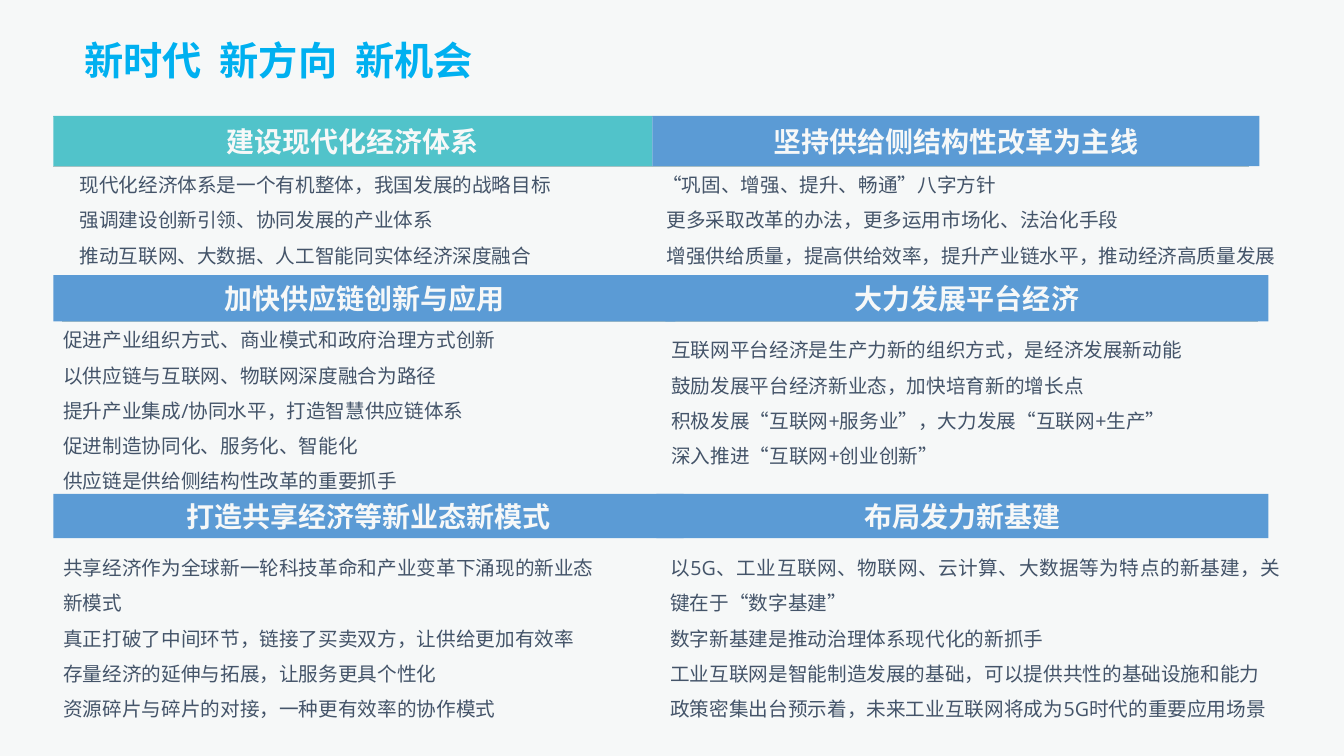
from pptx import Presentation
from pptx.dml.color import RGBColor
from pptx.enum.shapes import MSO_CONNECTOR, MSO_SHAPE
from pptx.enum.text import MSO_ANCHOR, PP_ALIGN
from pptx.oxml.ns import qn
from pptx.util import Inches, Pt

BACKGROUND, TITLE, BODY = "F6F8F8", "00B0F0", "445469"
TEAL, BLUE, RULE = "51C3CA", "5B9BD5", "B1C2C2"
CJK = "Noto Sans CJK SC"

HEADLINE = "新时代  新方向  新机会"

# Each row: band top, band height, two topics.
# Each topic: heading, colour, band (left, width),
# body (left, top, width, height), lines, numbers of the justified lines
ROWS = [
    (1.15, 0.5, [
        ("建设现代化经济体系", TEAL, (0.53, 5.94), (0.69, 1.55, 6.01, 1.86), [
            "现代化经济体系是一个有机整体，我国发展的战略目标",
            "强调建设创新引领、协同发展的产业体系",
            "推动互联网、大数据、人工智能同实体经济深度融合",
        ], ()),
        ("坚持供给侧结构性改革为主线", BLUE, (6.47, 6.02), (6.47, 1.55, 6.34, 1.81), [
            "“巩固、增强、提升、畅通”八字方针",
            " 更多采取改革的办法，更多运用市场化、法治化手段",
            " 增强供给质量，提高供给效率，提升产业链水平，推动经济高质量发展",
        ], ()),
    ]),
    (2.73, 0.46, [
        ("加快供应链创新与应用", BLUE, (0.53, 6.17), (0.53, 3.09, 6.24, 1.86), [
            "促进产业组织方式、商业模式和政府治理方式创新",
            "以供应链与互联网、物联网深度融合为路径",
            "提升产业集成/协同水平，打造智慧供应链体系",
            "促进制造协同化、服务化、智能化",
            "供应链是供给侧结构性改革的重要抓手",
        ], ()),
        ("大力发展平台经济", BLUE, (6.6, 5.98), (6.56, 3.19, 6.03, 1.57), [
            "互联网平台经济是生产力新的组织方式，是经济发展新动能",
            "鼓励发展平台经济新业态，加快培育新的增长点",
            "积极发展“互联网+服务业”，大力发展“互联网+生产”",
            "深入推进“互联网+创业创新”",
        ], (1,)),
    ]),
    (4.9, 0.44, [
        ("打造共享经济等新业态新模式", BLUE, (0.53, 6.25), (0.53, 5.35, 5.53, 1.87), [
            "共享经济作为全球新一轮科技革命和产业变革下涌现的新业态新模式",
            "真正打破了中间环节，链接了买卖双方，让供给更加有效率",
            "存量经济的延伸与拓展，让服务更具个性化",
            "资源碎片与碎片的对接，一种更有效率的协作模式",
        ], ()),
        ("布局发力新基建", BLUE, (6.51, 6.07), (6.55, 5.35, 6.25, 1.87), [
            "以5G、工业互联网、物联网、云计算、大数据等为特点的新基建，关键在于“数字基建”",
            "数字新基建是推动治理体系现代化的新抓手",
            "工业互联网是智能制造发展的基础，可以提供共性的基础设施和能力",
            "政策密集出台预示着，未来工业互联网将成为5G时代的重要应用场景",
        ], (0, 1)),
    ]),
]

# left, right, y
RULES = [(0.53, 12.39, 1.15), (0.53, 12.39, 1.65),
         (0.71, 12.58, 2.73), (0.62, 12.48, 3.19)]


def color(hex_code):
    return RGBColor.from_string(hex_code)


def add_run(paragraph, text, size, font, hex_code, bold=False):
    run = paragraph.add_run()
    run.text = text
    run.font.size = Pt(size)
    run.font.name = font
    run.font.bold = bold
    run.font.color.rgb = color(hex_code)
    east_asian = run.font._element.makeelement(qn("a:ea"), {"typeface": CJK})
    run.font._element.find(qn("a:latin")).addnext(east_asian)


def add_text_frame(slide, box):
    frame = slide.shapes.add_textbox(*map(Inches, box)).text_frame
    frame.word_wrap = True
    return frame


def add_band(slide, box, heading, fill):
    band = slide.shapes.add_shape(MSO_SHAPE.RECTANGLE, *map(Inches, box))
    band.shadow.inherit = False
    band.fill.solid()
    band.fill.fore_color.rgb = color(fill)
    band.line.fill.background()
    frame = band.text_frame
    frame.word_wrap = False
    frame.vertical_anchor = MSO_ANCHOR.MIDDLE
    frame.paragraphs[0].alignment = PP_ALIGN.CENTER
    add_run(frame.paragraphs[0], heading, 20, CJK, BACKGROUND, bold=True)


def add_body(slide, box, lines, justified):
    frame = add_text_frame(slide, box)
    for number, line in enumerate(lines):
        paragraph = frame.add_paragraph() if number else frame.paragraphs[0]
        paragraph.line_spacing = 1.5
        paragraph.alignment = PP_ALIGN.JUSTIFY if number in justified else PP_ALIGN.LEFT
        add_run(paragraph, line, 14, "Open Sans", BODY)


def add_rule(slide, left, right, y):
    rule = slide.shapes.add_connector(
        MSO_CONNECTOR.STRAIGHT, Inches(left), Inches(y), Inches(right), Inches(y))
    rule.line.color.rgb = color(RULE)
    rule.line.width = Pt(0.25)
    properties = rule._element.spPr
    properties.append(properties.makeelement(qn("a:effectLst"), {}))


def main():
    deck = Presentation()
    deck.slide_width, deck.slide_height = Inches(13.33), Inches(7.5)
    slide = deck.slides.add_slide(deck.slide_layouts[6])
    slide.background.fill.solid()
    slide.background.fill.fore_color.rgb = color(BACKGROUND)

    headline = add_text_frame(slide, (0.74, 0.36, 5.44, 0.52)).paragraphs[0]
    headline.line_spacing = 0.9
    headline.space_before = Pt(10)
    add_run(headline, HEADLINE, 28, "Arial", TITLE, bold=True)

    for rule in RULES:
        add_rule(slide, *rule)
    for top, height, topics in ROWS:
        for heading, fill, (left, width), body_box, lines, justified in topics:
            add_band(slide, (left, top, width, height), heading, fill)
            add_body(slide, body_box, lines, justified)

    deck.save("out.pptx")


if __name__ == "__main__":
    main()
